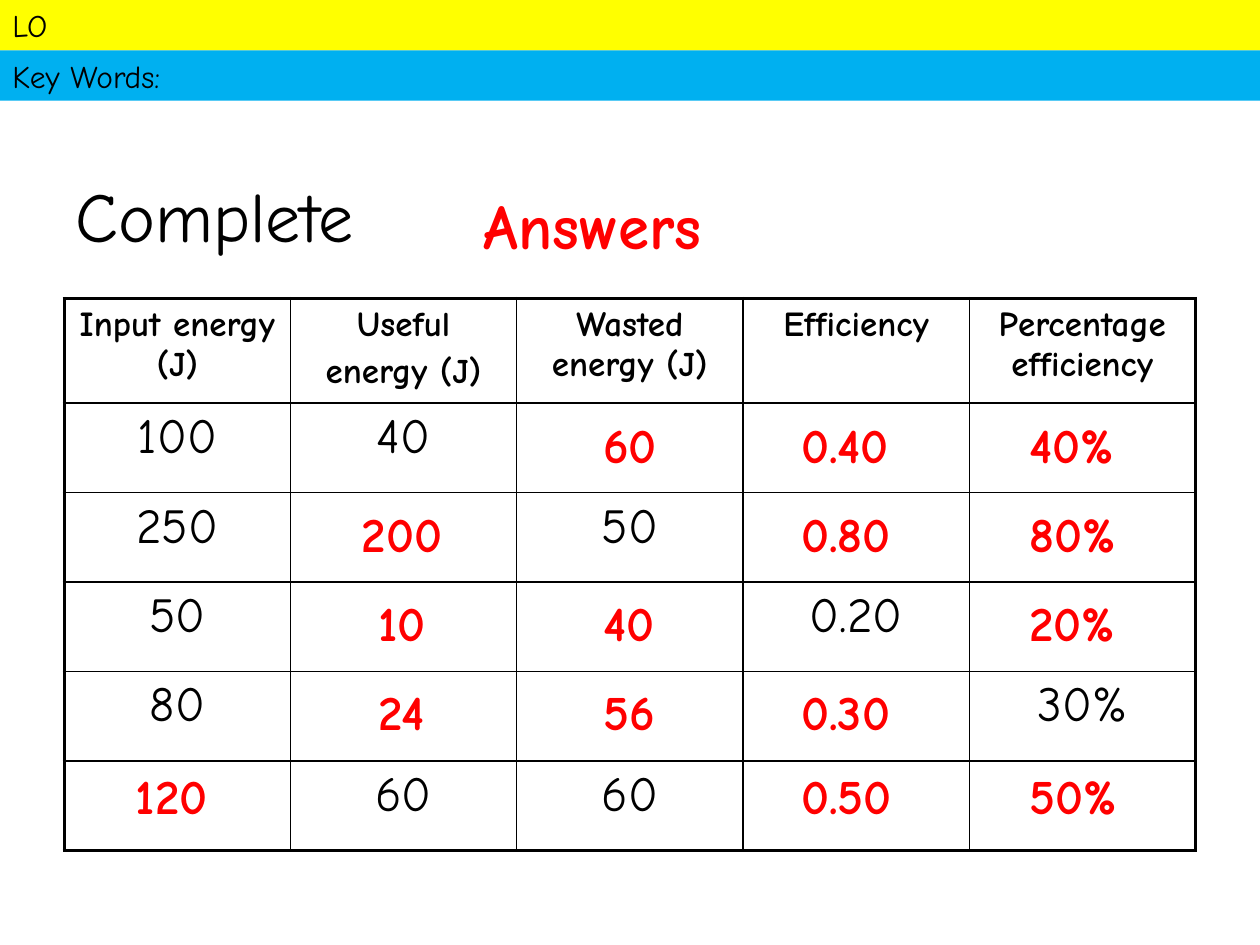
from dataclasses import dataclass

from lxml.etree import SubElement
from pptx import Presentation
from pptx.dml.color import RGBColor
from pptx.enum.shapes import MSO_SHAPE
from pptx.enum.text import MSO_ANCHOR, PP_ALIGN
from pptx.oxml.ns import qn
from pptx.util import Inches, Pt

FONT = "Comic Neue"
COLORS = {
    "black": "000000",
    "red": "FF0000",
    "white": "FFFFFF",
    "yellow": "FFFF00",
    "blue": "00B0F0",
}
THIN, THICK = Pt(1), Pt(2.25)


@dataclass
class TextStyle:
    size: float
    color: str = "black"
    bold: bool = False
    align: PP_ALIGN = PP_ALIGN.LEFT
    space_before: float = 0
    line_spacing: float = 1.0


@dataclass
class Panel:
    text: str
    left: float
    top: float
    width: float
    height: float
    style: TextStyle
    fill: str


@dataclass
class AnswerColumn:
    left: float
    answers: tuple
    align: PP_ALIGN = PP_ALIGN.LEFT


BAND_STYLE = TextStyle(18)
TITLE_STYLE = TextStyle(40, line_spacing=0.9)
HEADING_STYLE = TextStyle(20, bold=True, align=PP_ALIGN.CENTER, space_before=4)
VALUE_STYLE = TextStyle(28, align=PP_ALIGN.CENTER)

BANDS = [
    Panel("LO", 0, 0, 10, 0.4, BAND_STYLE, "yellow"),
    Panel("Key Words:", 0, 0.4, 10, 0.4, BAND_STYLE, "blue"),
]
ANSWERS_LABEL = Panel(
    "Answers", 3.74, 1.43, 3.07, 0.7, TextStyle(36, "red", True), "white"
)

TABLE_LEFT, TABLE_TOP, TABLE_WIDTH = 0.51, 2.37, 8.98
HEADING_HEIGHT, ROW_HEIGHT = 0.83, 0.71
TABLE_ROWS = [
    ["Input energy (J)", "Useful\nenergy (J)", "Wasted energy (J)",
     "Efficiency", "Percentage efficiency"],
    ["100", "40", "", "", ""],
    ["250", "", "50", "", ""],
    ["50", "", "", "0.20", ""],
    ["80", "", "", "", "30%"],
    ["", "60", "60", "", ""],
]

ANSWER_TOPS = [3.24, 3.95, 4.65, 5.36, 6.03]
ANSWER_COLUMNS = [
    AnswerColumn(0.98, ("", "", "", "", "120")),
    AnswerColumn(2.64, ("", "200", "10", "24", ""), PP_ALIGN.CENTER),
    AnswerColumn(4.69, ("60", "", "40", "56", "")),
    AnswerColumn(6.26, ("0.40", "0.80", "", "0.30", "0.50")),
    AnswerColumn(8.07, ("40%", "80%", "20%", "", "50%")),
]


def rgb(name: str) -> RGBColor:
    return RGBColor.from_string(COLORS[name])


def write_text(text_frame, text: str, style: TextStyle) -> None:
    text_frame.word_wrap = True
    text_frame.text = text
    for paragraph in text_frame.paragraphs:
        paragraph.alignment = style.align
        paragraph.space_before = Pt(style.space_before)
        paragraph.line_spacing = style.line_spacing
        paragraph.font.name = FONT
        paragraph.font.size = Pt(style.size)
        paragraph.font.bold = style.bold
        paragraph.font.color.rgb = rgb(style.color)


def add_panel(slide, panel: Panel) -> None:
    shape = slide.shapes.add_shape(
        MSO_SHAPE.RECTANGLE, Inches(panel.left), Inches(panel.top),
        Inches(panel.width), Inches(panel.height),
    )
    shape.shadow.inherit = False
    shape.fill.solid()
    shape.fill.fore_color.rgb = rgb(panel.fill)
    shape.line.fill.background()
    shape.text_frame.vertical_anchor = MSO_ANCHOR.TOP
    write_text(shape.text_frame, panel.text, panel.style)


def add_text(slide, text: str, left: float, top: float, width: float,
             height: float, style: TextStyle, anchor=MSO_ANCHOR.TOP) -> None:
    box = slide.shapes.add_textbox(
        Inches(left), Inches(top), Inches(width), Inches(height)
    )
    box.text_frame.vertical_anchor = anchor
    write_text(box.text_frame, text, style)


def set_borders(cell, widths: dict) -> None:
    """Draw black cell edges; widths maps L, R, T, B (in that order) to lengths."""
    properties = cell._tc.get_or_add_tcPr()
    for side, width in widths.items():
        line = SubElement(properties, qn(f"a:ln{side}"), w=str(int(width)))
        fill = SubElement(line, qn("a:solidFill"))
        SubElement(fill, qn("a:srgbClr"), val=COLORS["black"])


def add_energy_table(slide) -> None:
    row_count, column_count = len(TABLE_ROWS), len(TABLE_ROWS[0])
    height = HEADING_HEIGHT + ROW_HEIGHT * (row_count - 1)
    table = slide.shapes.add_table(
        row_count, column_count, Inches(TABLE_LEFT), Inches(TABLE_TOP),
        Inches(TABLE_WIDTH), Inches(height),
    ).table
    table.first_row = table.horz_banding = False
    for column in table.columns:
        column.width = Inches(TABLE_WIDTH / column_count)
    for row_index, values in enumerate(TABLE_ROWS):
        is_heading = row_index == 0
        table.rows[row_index].height = Inches(
            HEADING_HEIGHT if is_heading else ROW_HEIGHT
        )
        for column_index, value in enumerate(values):
            cell = table.cell(row_index, column_index)
            set_borders(cell, {
                "L": THICK if column_index == 0 else THIN,
                "R": THICK if column_index == column_count - 1 else THIN,
                "T": THICK if is_heading else THIN,
                "B": THICK if row_index == row_count - 1 else THIN,
            })
            cell.fill.background()
            if value:
                style = HEADING_STYLE if is_heading else VALUE_STYLE
                write_text(cell.text_frame, value, style)


def add_answers(slide) -> None:
    for column in ANSWER_COLUMNS:
        style = TextStyle(28, "red", True, column.align)
        for top, answer in zip(ANSWER_TOPS, column.answers):
            if answer:
                add_text(slide, answer, column.left, top, 1.1, 0.57, style)


def main() -> None:
    presentation = Presentation()
    presentation.slide_width = Inches(10)
    presentation.slide_height = Inches(7.5)
    slide = presentation.slides.add_slide(presentation.slide_layouts[6])
    for band in BANDS:
        add_panel(slide, band)
    add_text(slide, "Complete", 0.5, 1.36, 9, 0.77, TITLE_STYLE, MSO_ANCHOR.MIDDLE)
    add_energy_table(slide)
    add_answers(slide)
    add_panel(slide, ANSWERS_LABEL)
    presentation.save("out.pptx")


if __name__ == "__main__":
    main()
